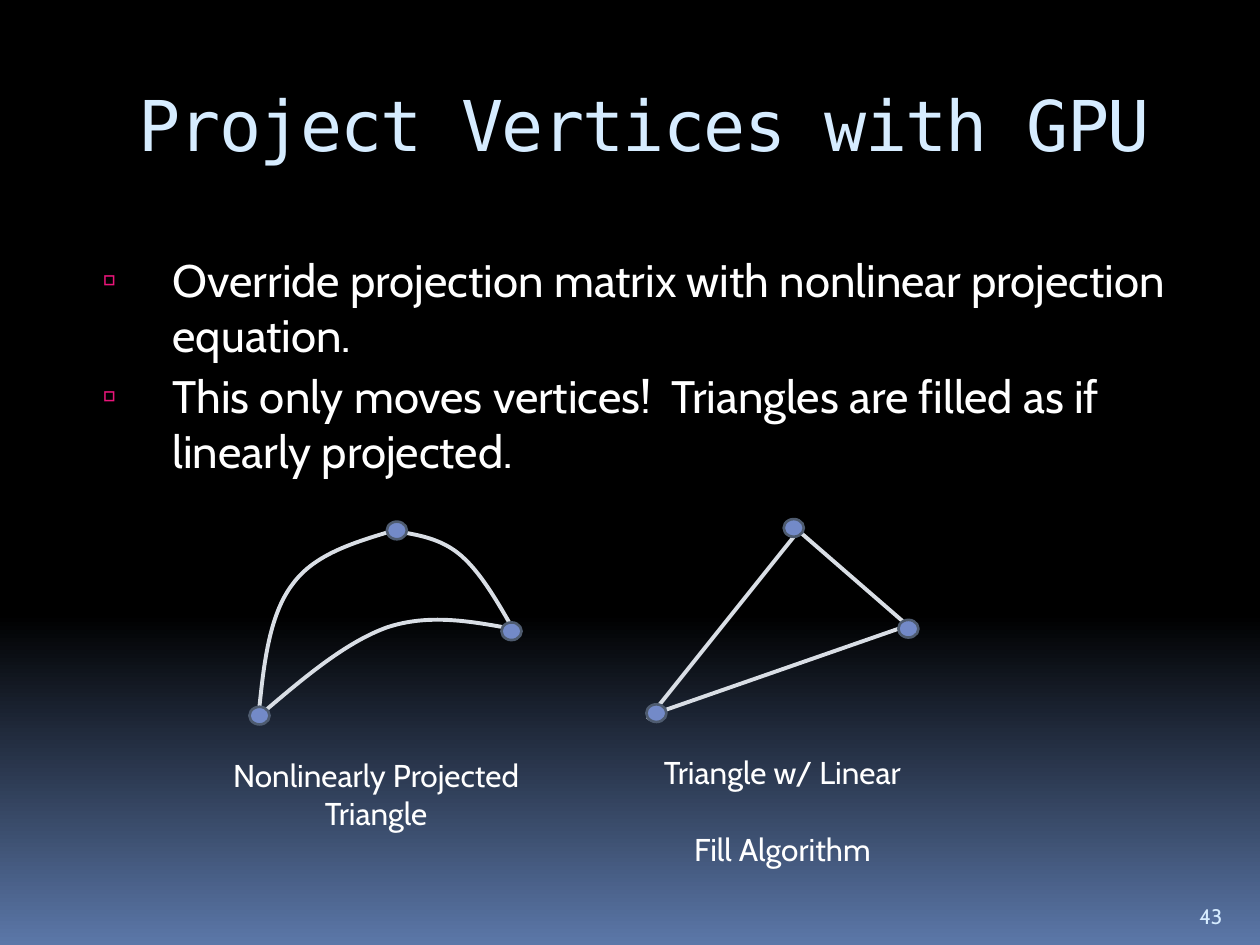
from copy import deepcopy
from pptx import Presentation
from pptx.dml.color import RGBColor
from pptx.enum.shapes import MSO_CONNECTOR, MSO_SHAPE
from pptx.enum.text import MSO_ANCHOR, MSO_AUTO_SIZE, PP_ALIGN
from pptx.oxml.ns import qn
from pptx.oxml.xmlchemy import OxmlElement
from pptx.util import Inches, Pt

THEME = {
    "title": {"name": "DejaVu Sans Mono", "size": 40, "color": "D6ECFF"},
    "body": {"name": "Cabin", "size": 26, "color": "FFFFFF"},
    "caption": {"name": "Cabin", "size": 18, "color": "FFFFFF"},
    "number": {"name": "Cabin", "size": 12, "color": "D6ECFF"},
    "background": [(0, "000000"), (0.65, "000000"), (1, "5B77A8")],
    "edge": ("D9DEE5", 2.25),
    "vertex_line": ("4E5B6F", 1.5),
    "vertex_fill": "738AC8",
    "bullet": "EA157A",
}

TITLE = "Project Vertices with GPU"
BULLETS = [
    "Override projection matrix with nonlinear projection equation.",
    "This only moves vertices!  Triangles are filled as if linearly projected.",
]
CAPTIONS = [
    ((1.75, 5.95, 2.47, 0.71), ["Nonlinearly Projected", "Triangle"], 0),
    ((5.16, 5.93, 2.1, 0.71), ["Triangle w/ Linear", "Fill Algorithm"], 22),
]
PAGE_NUMBER = "43"

STRAIGHT_EDGES = [
    ((6.3, 4.26), (5.14, 5.71)),
    ((5.15, 5.68), (7.16, 4.98)),
    ((6.3, 4.18), (7.21, 4.97)),
]
CURVED_EDGES = [
    [(3.16, 4.2), (2.83, 4.3), (2.5, 4.39), (2.32, 4.64),
     (2.13, 4.89), (2.09, 5.3), (2.05, 5.7)],
    [(4.06, 4.99), (3.73, 4.93), (3.4, 4.87), (3.07, 4.98),
     (2.74, 5.1), (2.41, 5.38), (2.07, 5.67)],
    [(4.07, 4.99), (3.94, 4.76), (3.81, 4.54), (3.66, 4.41),
     (3.51, 4.28), (3.34, 4.25), (3.17, 4.22)],
]
VERTICES = [(3.07, 4.14), (1.98, 5.61), (3.98, 4.94)]
TRIANGLE_OFFSETS = [(0, 0), (3.15, -0.02)]
VERTEX_SIZE = (0.16, 0.14)


def inches(values):
    return [Inches(value) for value in values]


def place(shape, bounds):
    for name, value in zip(("left", "top", "width", "height"), inches(bounds)):
        setattr(shape, name, value)


def style_font(font, role):
    style = THEME[role]
    for name, value in {"name": style["name"], "size": Pt(style["size"])}.items():
        setattr(font, name, value)
    font.color.rgb = RGBColor.from_string(style["color"])


def style_line(line, style):
    color, width = style
    line.color.rgb = RGBColor.from_string(color)
    line.width = Pt(width)


def format_frame(frame, **values):
    for name, value in values.items():
        setattr(frame, name, value)


def add_bullet(para):
    props = para._p.get_or_add_pPr()
    props.set("marL", str(Inches(1.06)))
    props.set("indent", str(Inches(-0.56)))
    color = OxmlElement("a:buClr")
    rgb = OxmlElement("a:srgbClr")
    rgb.set("val", THEME["bullet"])
    color.append(rgb)
    size = OxmlElement("a:buSzPct")
    size.set("val", "90000")
    char = OxmlElement("a:buChar")
    char.set("char", "▫")
    props.extend([color, size, char])


def paint_background(page):
    fill = page.background.fill
    fill.gradient()
    fill.gradient_angle = 270
    stops = page.element.find(".//" + qn("a:gsLst"))
    stops.insert(1, deepcopy(stops[0]))
    for stop, (position, color) in zip(fill.gradient_stops, THEME["background"]):
        stop.position = position
        stop.color.rgb = RGBColor.from_string(color)


def add_straight_edge(page, start, end):
    edge = page.shapes.add_connector(MSO_CONNECTOR.STRAIGHT, *inches(start + end))
    style_line(edge.line, THEME["edge"])
    edge._element.spPr.append(OxmlElement("a:effectLst"))


def add_curved_edge(page, points):
    start, *rest = [inches(point) for point in points]
    builder = page.shapes.build_freeform(*start)
    builder.add_line_segments(rest, close=False)
    edge = builder.convert_to_shape()
    edge.fill.background()
    style_line(edge.line, THEME["edge"])
    edge.shadow.inherit = False
    segments = list(edge._element.iter(qn("a:lnTo")))
    for first in range(0, len(segments), 3):
        curve = OxmlElement("a:cubicBezTo")
        segments[first].addprevious(curve)
        for segment in segments[first:first + 3]:
            curve.append(segment[0])
            segment.getparent().remove(segment)


def add_vertex(page, left, top):
    vertex = page.shapes.add_shape(MSO_SHAPE.OVAL, *inches((left, top) + VERTEX_SIZE))
    vertex.fill.solid()
    vertex.fill.fore_color.rgb = RGBColor.from_string(THEME["vertex_fill"])
    style_line(vertex.line, THEME["vertex_line"])
    vertex.shadow.inherit = False


def add_title(page):
    title = page.shapes.title
    place(title, (1, 0.56, 8.5, 1))
    title.text = TITLE
    format_frame(title.text_frame, vertical_anchor=MSO_ANCHOR.TOP, word_wrap=True,
                 auto_size=MSO_AUTO_SIZE.NONE, margin_top=Inches(0.09))
    para = title.text_frame.paragraphs[0]
    para.alignment = PP_ALIGN.LEFT
    span = para.runs[0]
    style_font(span.font, "title")
    span.font._element.set("spc", "-100")


def add_body(page):
    body = page.placeholders[1]
    place(body, (0.21, 1.95, 9.5, 5))
    frame = body.text_frame
    frame.text = "\n".join(BULLETS)
    format_frame(frame, vertical_anchor=MSO_ANCHOR.TOP, word_wrap=True,
                 auto_size=MSO_AUTO_SIZE.NONE)
    for index, para in enumerate(frame.paragraphs):
        para.level = 1
        para.space_before = Pt(4 if index else 0)
        add_bullet(para)
        style_font(para.runs[0].font, "body")


def add_text(page, bounds, lines, role, alignment, gap=0, **frame_values):
    box = page.shapes.add_textbox(*inches(bounds))
    frame = box.text_frame
    frame.text = "\n".join(lines)
    format_frame(frame, **frame_values)
    for index, para in enumerate(frame.paragraphs):
        para.alignment = alignment
        para.space_before = Pt(gap if index else 0)
        style_font(para.runs[0].font, role)


def main():
    deck = Presentation()
    deck.slide_width, deck.slide_height = inches((10, 7.5))
    page = deck.slides.add_slide(deck.slide_layouts[1])
    paint_background(page)
    add_title(page)
    add_body(page)
    for start, end in STRAIGHT_EDGES:
        add_straight_edge(page, start, end)
    for points in CURVED_EDGES:
        add_curved_edge(page, points)
    for across, down in TRIANGLE_OFFSETS:
        for left, top in VERTICES:
            add_vertex(page, left + across, top + down)
    for bounds, lines, gap in CAPTIONS:
        add_text(page, bounds, lines, "caption", PP_ALIGN.CENTER, gap, word_wrap=False)
    add_text(page, (9.42, 7.02, 0.5, 0.4), [PAGE_NUMBER], "number", PP_ALIGN.LEFT,
             word_wrap=True, vertical_anchor=MSO_ANCHOR.BOTTOM)
    deck.save("out.pptx")


if __name__ == "__main__":
    main()
